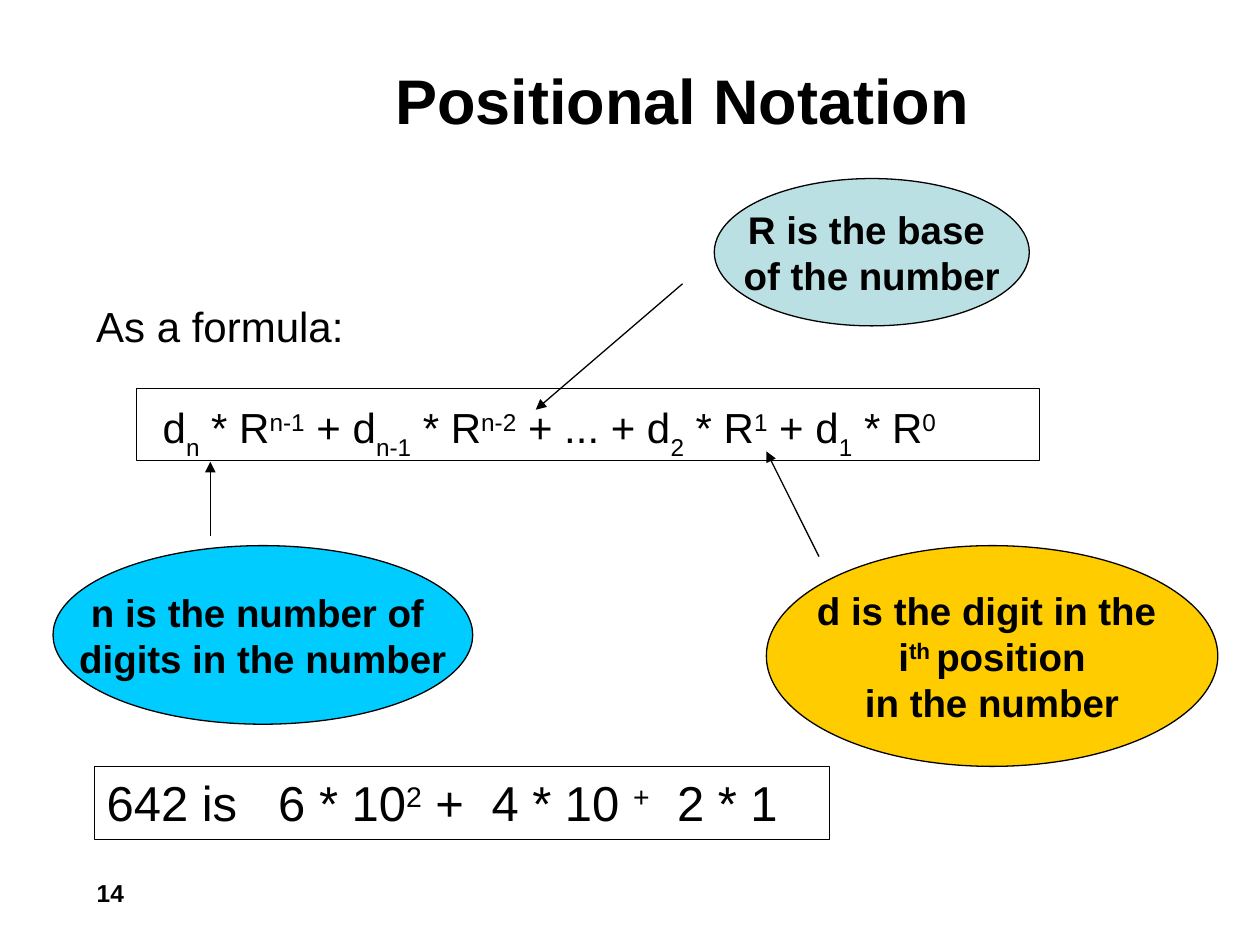
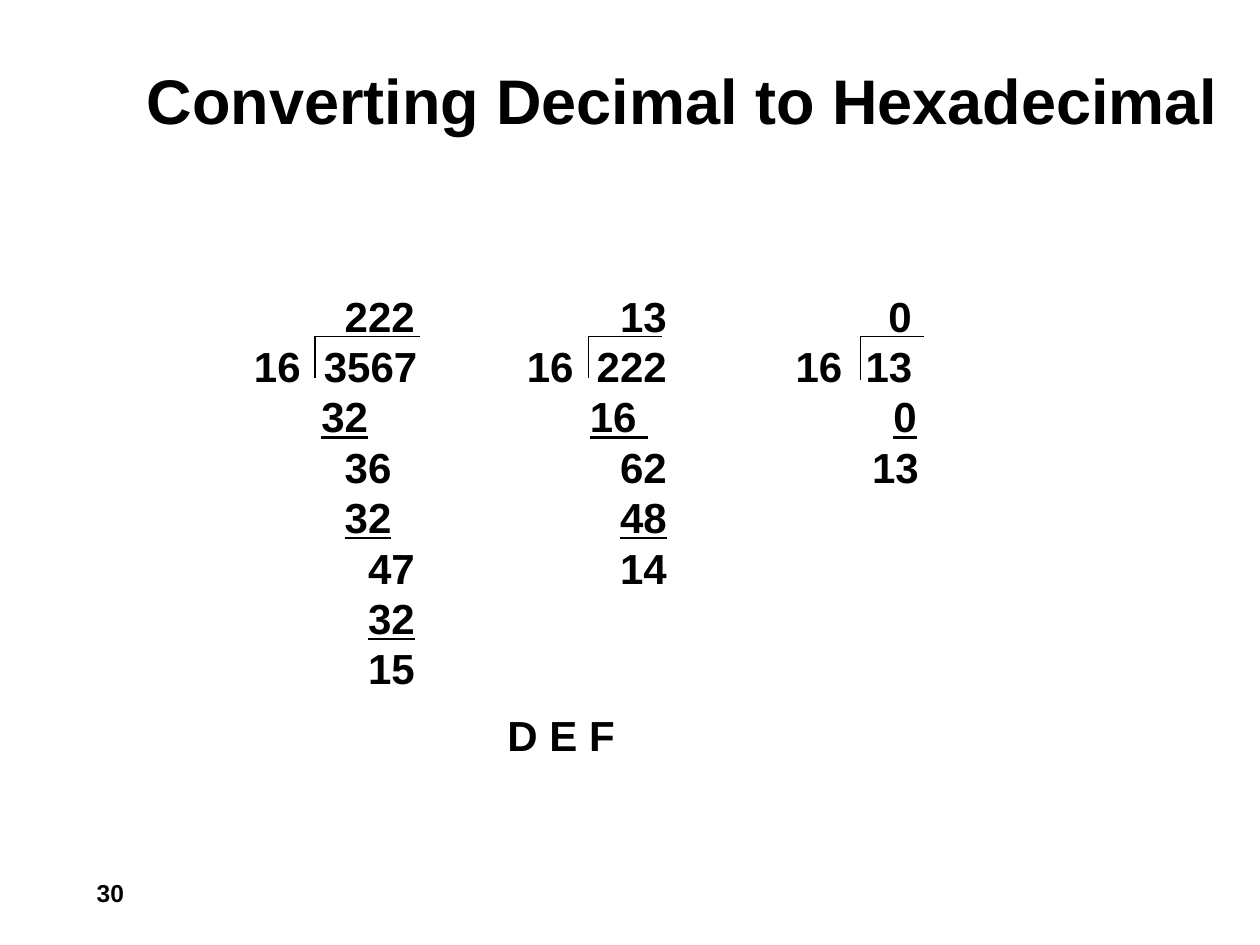
"""Build two slides on positional notation and decimal to hexadecimal conversion."""
from dataclasses import dataclass

from lxml.etree import SubElement
from pptx import Presentation
from pptx.dml.color import RGBColor
from pptx.enum.shapes import MSO_CONNECTOR as Connector, MSO_SHAPE as Preset
from pptx.enum.text import MSO_ANCHOR as Anchor, MSO_AUTO_SIZE as AutoSize, PP_ALIGN as Align
from pptx.oxml.ns import qn
from pptx.util import Cm, Pt


@dataclass(frozen=True)
class Theme:
    font: str = "Arial"
    ink: str = "000000"
    paper: str = "FFFFFF"
    base: str = "BBE0E3"
    count: str = "00CCFF"
    digit: str = "FFCC00"
    title: int = 36
    example: int = 28
    body: int = 24
    callout: int = 22
    number: int = 14
    line: float = 0.75


@dataclass(frozen=True)
class Part:
    text: str
    style: str = ""
    stop: float = 0


THEME = Theme()
BASELINES = {"sup": "30000", "sub": "-30000"}

NOTATION_TITLE, NOTATION_NUMBER = "Positional Notation", "14"
INTRO = "As a formula:"
FORMULA = [
    Part("d"), Part("n", "sub"), Part(" * R"), Part("n-1", "sup"),
    Part(" + d"), Part("n-1", "sub"), Part(" * R"), Part("n-2", "sup"),
    Part(" + ... + d"), Part("2", "sub"), Part(" * R"), Part("1", "sup"),
    Part(" + d"), Part("1", "sub"), Part(" * R"), Part("0", "sup"),
]
EXAMPLE = [
    Part("642 is"), Part("6 * 10", stop=3.46), Part("2", "sup"), Part(" +"),
    Part("4 * 10 ", stop=7.76), Part("+", "sup"), Part("2 * 1", stop=11.5),
]
CALLOUTS = [
    ((14.4, 3.6, 6.35, 2.97), THEME.base,
     [[Part("R is the base ")], [Part("of the number")]]),
    ((1.07, 11, 8.46, 3.6), THEME.count,
     [[Part("n is the number of ")], [Part("digits in the number")]]),
    ((15.45, 11, 9.1, 4.45), THEME.digit,
     [[Part("d is the digit in the ")],
      [Part(" i"), Part("th ", "sup"), Part("position ")],
      [Part("in the number")]]),
]
ARROWS = [
    (4.24, 10.8, 4.24, 9.31),
    (16.51, 11.22, 15.45, 9.1),
    (13.76, 5.72, 10.8, 8.26),
]

HEX_TITLE, HEX_NUMBER = "Converting Decimal to Hexadecimal", "30"
DIVISIONS = [
    [Part("222", stop=3.95), Part("13", stop=9.5), Part("0", stop=14.91)],
    [Part("16", stop=2.12), Part("3567", stop=3.53), Part("16", stop=7.62),
     Part("222", stop=9.03), Part("16", stop=13.04), Part("13", stop=14.45)],
    [Part("32", "under", 3.48), Part("16 ", "under", 8.89), Part("0", "under", 15.01)],
    [Part("36", stop=3.95), Part("62", stop=9.5), Part("13", stop=14.58)],
    [Part("32", "under", 3.95), Part("48", "under", 9.5)],
    [Part("47", stop=4.42), Part("14", stop=9.5)],
    [Part("32", "under", 4.42)],
    [Part("15", stop=4.42)],
]
BRACKET_TOP = 6.78
BRACKETS = [(6.35, 8.46, 7.62), (11.86, 13.34, 7.62), (17.35, 18.62, 7.67)]
RESULT = "D E F"


def lengths(values):
    return [Cm(value) for value in values]


def write(shape, content, *, size, bold=False, align=Align.LEFT, anchor=Anchor.TOP,
          wrap=True, left=0.25, top=0.13):
    """Fill a shape with formatted paragraphs made of parts, or with one plain string."""
    frame = shape.text_frame
    frame.auto_size = AutoSize.NONE
    frame.word_wrap, frame.vertical_anchor = wrap, anchor
    frame.margin_left, frame.margin_top = Cm(left), Cm(top)
    rows = [[Part(content)]] if isinstance(content, str) else content
    for index, parts in enumerate(rows):
        paragraph = frame.add_paragraph() if index else frame.paragraphs[0]
        paragraph.alignment = align
        stops = [part.stop for part in parts if part.stop]
        if stops:
            tab_list = SubElement(paragraph._p.get_or_add_pPr(), qn("a:tabLst"))
            for stop in stops:
                SubElement(tab_list, qn("a:tab"), pos=str(Cm(stop)), algn="l")
        for part in parts:
            pieces = [("\t", "")] if part.stop else []
            for text, style in pieces + [(part.text, part.style)]:
                run = paragraph.add_run()
                run.text = text
                run.font.name, run.font.size, run.font.bold = THEME.font, Pt(size), bold
                run.font.color.rgb = RGBColor.from_string(THEME.ink)
                if style == "under":
                    run.font.underline = True
                elif style:
                    run._r.get_or_add_rPr().set("baseline", BASELINES[style])


def add_panel(slide, preset, place, fill, outlined=True):
    panel = slide.shapes.add_shape(preset, *lengths(place))
    panel.shadow.inherit = False
    panel.fill.solid()
    panel.fill.fore_color.rgb = RGBColor.from_string(fill)
    if outlined:
        panel.line.color.rgb = RGBColor.from_string(THEME.ink)
        panel.line.width = Pt(THEME.line)
    else:
        panel.line.fill.background()
    return panel


def add_line(slide, ends, arrow=False):
    line = slide.shapes.add_connector(Connector.STRAIGHT, *lengths(ends))
    line.line.color.rgb = RGBColor.from_string(THEME.ink)
    line.line.width = Pt(THEME.line)
    if arrow:
        SubElement(line.line._get_or_add_ln(), qn("a:tailEnd"), type="triangle")
    SubElement(line._element.spPr, qn("a:effectLst"))


def add_label(slide, place, text, **style):
    write(slide.shapes.add_textbox(*lengths(place)), text, **style)


def add_slide(deck, title, number):
    slide = deck.slides.add_slide(deck.slide_layouts[5])
    heading = slide.shapes.title
    heading.left, heading.top, heading.width, heading.height = lengths((2.33, 0.42, 22.86, 3.18))
    write(heading, title, size=THEME.title, bold=True, align=Align.CENTER, anchor=Anchor.MIDDLE)
    add_label(slide, (1.48, 17.57, 1.27, 1.06), number,
              size=THEME.number, bold=True, align=Align.RIGHT)
    return slide


def build_notation(deck):
    slide = add_slide(deck, NOTATION_TITLE, NOTATION_NUMBER)
    formula = add_panel(slide, Preset.RECTANGLE, (2.75, 7.83, 18.2, 1.45), THEME.paper)
    write(formula, [FORMULA], size=THEME.body, left=0.53, top=0.27)
    add_label(slide, (1.69, 5.93, 21.38, 1.27), INTRO, size=THEME.body)
    example = add_panel(slide, Preset.RECTANGLE, (1.9, 15.45, 14.82, 1.47), THEME.paper)
    write(example, [EXAMPLE], size=THEME.example)
    for place, fill, lines in CALLOUTS:
        write(add_panel(slide, Preset.OVAL, place, fill), lines, size=THEME.callout,
              bold=True, align=Align.CENTER, anchor=Anchor.MIDDLE, wrap=False)
    for ends in ARROWS:
        add_line(slide, ends, arrow=True)


def build_hexadecimal(deck):
    slide = add_slide(deck, HEX_TITLE, HEX_NUMBER)
    work = add_panel(slide, Preset.RECTANGLE, (2.75, 5.72, 18.84, 10.39), THEME.paper, False)
    write(work, DIVISIONS, size=THEME.body, bold=True)
    for left, right, bottom in BRACKETS:
        add_line(slide, (left, bottom, left, BRACKET_TOP))
        add_line(slide, (left, BRACKET_TOP, right, BRACKET_TOP))
    add_label(slide, (9.74, 14.18, 6.98, 1.27), RESULT, size=THEME.body, bold=True, left=0.49)


def main():
    deck = Presentation()
    deck.slide_width, deck.slide_height = Cm(25.4), Cm(19.05)
    build_notation(deck)
    build_hexadecimal(deck)
    deck.save("out.pptx")


if __name__ == "__main__":
    main()
